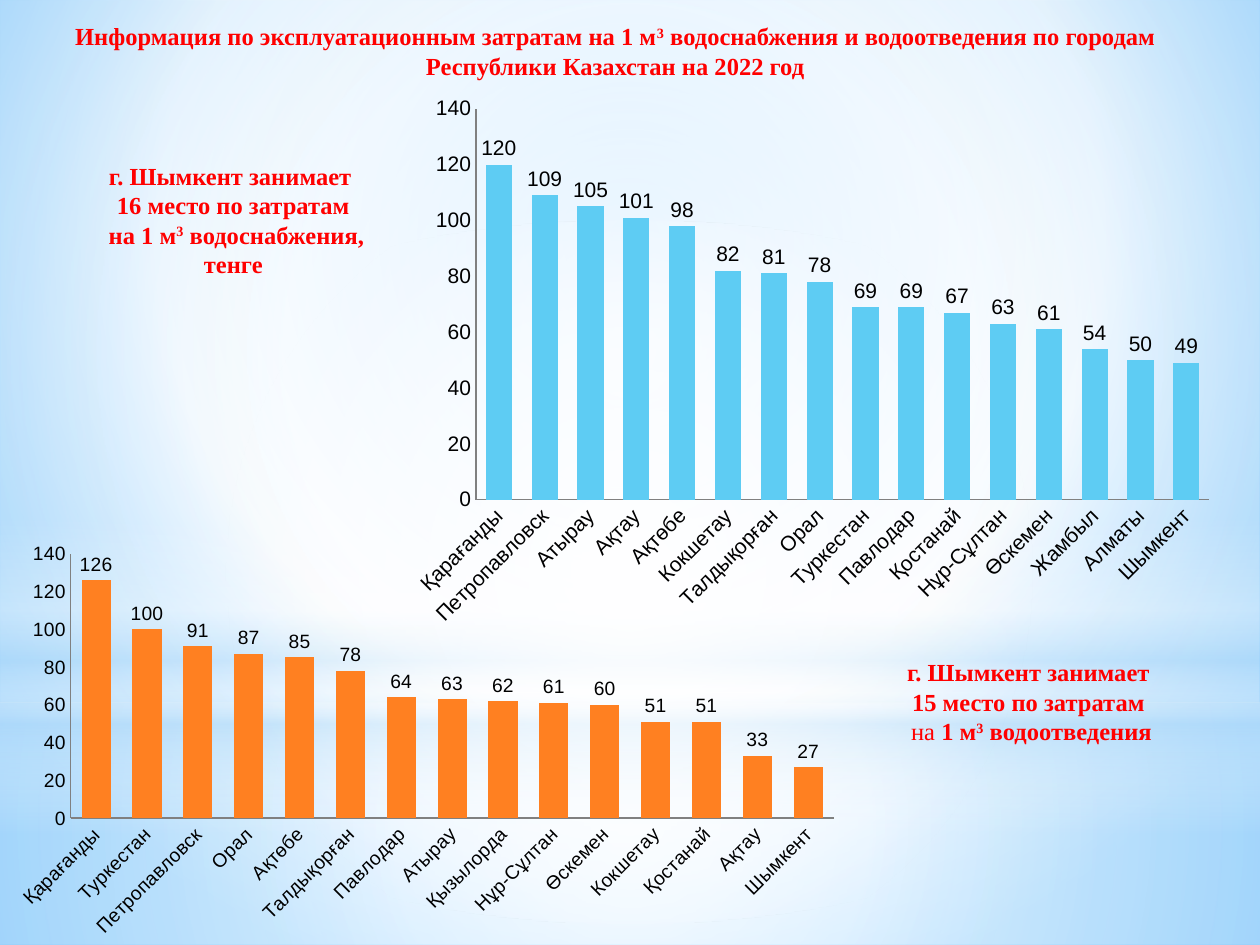
from lxml import etree
from pptx import Presentation
from pptx.chart.data import CategoryChartData
from pptx.dml.color import RGBColor
from pptx.enum.chart import XL_CHART_TYPE as ChartType
from pptx.enum.chart import XL_LABEL_POSITION as LabelPosition
from pptx.enum.chart import XL_TICK_MARK as TickMark
from pptx.enum.shapes import MSO_SHAPE as Preset
from pptx.enum.text import MSO_ANCHOR as Anchor
from pptx.enum.text import PP_ALIGN as Align
from pptx.oxml import parse_xml
from pptx.oxml.ns import nsdecls, qn
from pptx.util import Cm, Pt

COLORS = {
    "white": "FFFFFF", "pale": "B4DCFA", "sky": "9ED5FF", "deep": "5BB9FF",
    "red": "FF0000", "black": "000000", "axis": "808080",
    "supply": "5ECCF3", "sewerage": "FF8021",
}


def paint_gradient(element, stops, focus=None):
    """Replace the first solid fill in element; without a focus the gradient runs downwards."""
    gradient = parse_xml(f'<a:gradFill {nsdecls("a")} rotWithShape="1"><a:gsLst/></a:gradFill>')
    for position, color, opacity in stops:
        stop = etree.SubElement(gradient[0], qn("a:gs"), pos=str(position * 1000))
        tint = etree.SubElement(stop, qn("a:srgbClr"), val=COLORS[color])
        if opacity < 100:
            etree.SubElement(tint, qn("a:alpha"), val=str(opacity * 1000))
    if focus:
        circle = etree.SubElement(gradient, qn("a:path"), path="circle")
        sides = {side: str(value * 1000) for side, value in zip("ltrb", focus)}
        etree.SubElement(circle, qn("a:fillToRect"), **sides)
    else:
        etree.SubElement(gradient, qn("a:lin"), ang="5400000", scaled="0")
    solid = element.find(".//" + qn("a:solidFill"))
    solid.getparent().replace(solid, gradient)


def write_text(shape, lines, size=14, font="Times New Roman", color="red", wrap=True):
    """Each line is a list of (text, style) runs; style holds b for bold, s for superscript."""
    frame = shape.text_frame
    frame.word_wrap = wrap
    frame.vertical_anchor = Anchor.TOP
    for index, line in enumerate(lines):
        paragraph = frame.add_paragraph() if index else frame.paragraphs[0]
        paragraph.alignment = Align.CENTER
        for text, style in line:
            run = paragraph.add_run()
            run.text = text
            run.font.size = Pt(size)
            run.font.name = font
            run.font.bold = "b" in style
            run.font.color.rgb = RGBColor.from_string(COLORS[color])
            if "s" in style:
                run.font._element.set("baseline", "30000")


presentation = Presentation()
presentation.slide_width = Cm(25.4)
presentation.slide_height = Cm(19.05)
slide = presentation.slides.add_slide(presentation.slide_layouts[5])

# Background and its soft light overlays
slide.background.fill.solid()
paint_gradient(slide.element, [(0, "sky", 100), (60, "white", 100), (100, "deep", 100)],
               focus=(20, 10, 20, 60))
center = (50, 50, 50, 50)
overlays = [
    (Preset.RECTANGLE, 14.17, 4.88, center,
     [(0, "white", 91), (37, "white", 76), (100, "pale", 79)]),
    (Preset.RECTANGLE, 0, 14.17, center,
     [(0, "white", 89), (48, "white", 62), (100, "pale", 79)]),
    (Preset.RECTANGLE, 10.46, 6.35, None,
     [(0, "white", 0), (29, "white", 30), (45, "pale", 40),
      (55, "white", 26), (65, "pale", 60), (100, "white", 0)]),
    (Preset.OVAL, 4.45, 14.17, center, [(0, "white", 100), (56, "white", 0)]),
]
title = slide.shapes.title
for preset, top, height, focus, stops in overlays:
    overlay = slide.shapes.add_shape(preset, 0, Cm(top), presentation.slide_width, Cm(height))
    overlay.shadow.inherit = False
    overlay.line.fill.background()
    overlay.fill.solid()
    paint_gradient(overlay.element, stops, focus)
    title.element.addprevious(overlay.element)

title.left, title.top, title.width, title.height = Cm(0.71), Cm(0.3), Cm(23.39), Cm(1.45)
write_text(title, [[
    ("Информация по эксплуатационным затратам на 1 м", "b"), ("3", "bs"),
    (" водоснабжения и водоотведения по городам Республики Казахстан на 2022 год", "b"),
]])

# Charts: box, font size, bar colour, inner plot area (x, y, w, h), costs by city
charts = [
    ((8.1, 1.75, 16.61, 11.1), 12, "supply", (0.09, 0.04, 0.89, 0.71), {
        "Қарағанды": 120, "Петропавловск": 109, "Атырау": 105, "Ақтау": 101,
        "Ақтөбе": 98, "Кокшетау": 82, "Талдықорған": 81, "Орал": 78,
        "Туркестан": 69, "Павлодар": 69, "Қостанай": 67, "Нұр-Сұлтан": 63,
        "Өскемен": 61, "Жамбыл": 54, "Алматы": 50, "Шымкент": 49}),
    ((0.23, 10.57, 17.09, 8.46), 11, "sewerage", (0.07, 0.07, 0.9, 0.63), {
        "Қарағанды": 126, "Туркестан": 100, "Петропавловск": 91, "Орал": 87,
        "Ақтөбе": 85, "Талдықорған": 78, "Павлодар": 64, "Атырау": 63,
        "Қызылорда": 62, "Нұр-Сұлтан": 61, "Өскемен": 60, "Кокшетау": 51,
        "Қостанай": 51, "Ақтау": 33, "Шымкент": 27}),
]
for box, size, color, plot_area, costs in charts:
    data = CategoryChartData()
    data.categories = list(costs)
    data.add_series("Series 1", list(costs.values()))
    chart = slide.shapes.add_chart(ChartType.COLUMN_CLUSTERED, *map(Cm, box), data).chart
    chart.has_legend = False
    chart.has_title = False
    chart.font.size = Pt(size)
    chart.font.name = "Arial"
    chart.font.color.rgb = RGBColor.from_string(COLORS["black"])

    for axis in (chart.category_axis, chart.value_axis):
        axis.has_major_gridlines = False
        axis.major_tick_mark = axis.minor_tick_mark = TickMark.NONE
        axis.format.line.color.rgb = RGBColor.from_string(COLORS["axis"])
        axis.tick_labels.font.size = Pt(size)
    chart.value_axis.minimum_scale = 0
    chart.value_axis.maximum_scale = 140
    chart.value_axis.major_unit = 20
    label_body = chart.category_axis._element.find(".//" + qn("a:bodyPr"))
    label_body.set("rot", "-2700000")
    label_body.set("vert", "horz")

    plot = chart.plots[0]
    plot.gap_width = 75
    plot.vary_by_categories = False
    plot.has_data_labels = True
    plot.data_labels.show_value = True
    plot.data_labels.position = LabelPosition.OUTSIDE_END
    bars = plot.series[0].format.fill
    bars.solid()
    bars.fore_color.rgb = RGBColor.from_string(COLORS[color])

    area = chart._chartSpace.find(".//" + qn("c:plotArea"))
    for old_layout in area.findall(qn("c:layout")):
        area.remove(old_layout)
    layout = parse_xml(f'<c:layout {nsdecls("c")}><c:manualLayout/></c:layout>')
    settings = [("layoutTarget", "inner"), ("xMode", "edge"), ("yMode", "edge"),
                *zip("xywh", plot_area)]
    for name, value in settings:
        etree.SubElement(layout[0], qn("c:" + name), val=str(value))
    area.insert(0, layout)

# Notes on the place of Shymkent
captions = [
    ((1.3, 3.12, 6.81, 2.79), [
        [("г. Шымкент занимает ", "b")],
        [("16 место по затратам", "b")],
        [(" на 1 м", "b"), ("3", "bs"), (" водоснабжения, тенге", "b")]]),
    ((17.91, 13.13, 5.77, 1.96), [
        [("г. Шымкент занимает ", "b")],
        [("15 место по затратам ", "b")],
        [("на ", ""), ("1 м", "b"), ("3", "bs"), (" водоотведения", "b")]]),
]
for box, lines in captions:
    write_text(slide.shapes.add_textbox(*map(Cm, box)), lines, wrap=False)

presentation.save("out.pptx")
